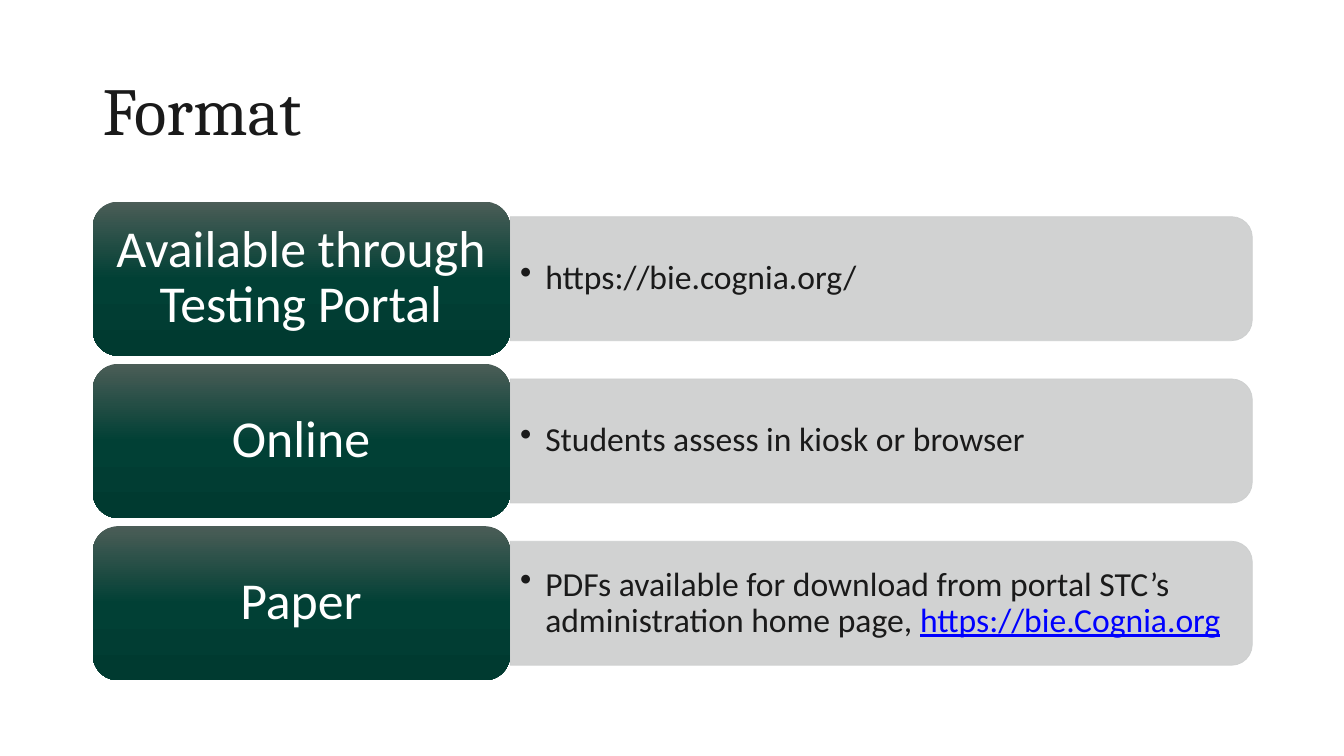
from copy import deepcopy

from lxml.etree import SubElement
from pptx import Presentation
from pptx.dml.color import RGBColor
from pptx.enum.shapes import MSO_SHAPE
from pptx.enum.text import MSO_ANCHOR, PP_ALIGN
from pptx.oxml.ns import qn
from pptx.util import Inches, Pt

COLORS = {
    "ink": "1A1A1A",
    "bar": "CCCECE",
    "label": "FFFFFF",
    "link": "0000FF",
    "green_top": "4B5D57",
    "green_middle": "014035",
    "green_bottom": "003A30",
}
ROWS = [
    ("Available through Testing Portal", "https://bie.cognia.org/", ""),
    ("Online", "Students assess in kiosk or browser", ""),
    (
        "Paper",
        "PDFs available for download from portal STC’s administration home page, ",
        "https://bie.Cognia.org",
    ),
]
FIRST_TOP, ROW_PITCH, LABEL_HEIGHT = 2, 1.61, 1.53
LABEL_LEFT, LABEL_WIDTH = 0.92, 4.14
BAR_LEFT = LABEL_LEFT + LABEL_WIDTH
BAR_LENGTH, BAR_HEIGHT = 7.36, 1.23


def color(name):
    """Return the named palette colour."""
    return RGBColor.from_string(COLORS[name])


def add_text(slide, box, text, font_name, size, color_name, margins=(0.1, 0.05)):
    """Add a wrapped, vertically centred text box and return its paragraph."""
    frame = slide.shapes.add_textbox(*map(Inches, box)).text_frame
    frame.word_wrap = True
    frame.vertical_anchor = MSO_ANCHOR.MIDDLE
    frame.margin_left = frame.margin_right = Inches(margins[0])
    frame.margin_top = frame.margin_bottom = Inches(margins[1])
    paragraph = frame.paragraphs[0]
    paragraph.text = text
    paragraph.line_spacing = 0.9
    font = paragraph.runs[0].font
    font.name, font.size, font.color.rgb = font_name, Pt(size), color(color_name)
    return paragraph


def add_bullet(paragraph):
    """Give the paragraph a hanging round bullet."""
    properties = paragraph._p.get_or_add_pPr()
    properties.set("marL", str(Inches(0.25)))
    properties.set("indent", str(Inches(-0.25)))
    SubElement(properties, qn("a:buChar"), char="•")


def add_detail_bar(slide, middle):
    """Add the grey bar, turned so that its rounded corners face right."""
    bar = slide.shapes.add_shape(
        MSO_SHAPE.ROUND_2_SAME_RECTANGLE,
        Inches(BAR_LEFT + (BAR_LENGTH - BAR_HEIGHT) / 2),
        Inches(middle - BAR_LENGTH / 2),
        Inches(BAR_HEIGHT),
        Inches(BAR_LENGTH),
    )
    bar.rotation = 90
    bar.shadow.inherit = False
    bar.fill.solid()
    bar.fill.fore_color.rgb = color("bar")
    bar.line.color.rgb = color("bar")
    bar.line.width = Pt(0.5)
    for tint in bar._element.spPr.iter(qn("a:srgbClr")):
        SubElement(tint, qn("a:alpha"), val="90000")


def add_detail(slide, middle, text, link):
    """Add the bulleted detail, ending in a link-styled address if given."""
    box = (BAR_LEFT, middle - 0.555, 7.3, 1.11)
    detail = add_text(slide, box, text, "Calibri", 24, "ink")
    add_bullet(detail)
    detail.space_after = Pt(3.6)
    if link:
        address = detail.add_run()
        address.text = link
        font = address.font
        font.name, font.size, font.underline = "Calibri", Pt(24), True
        font.color.rgb = color("link")


def add_label(slide, top, text):
    """Add the green gradient block with its centred label."""
    block = slide.shapes.add_shape(
        MSO_SHAPE.ROUNDED_RECTANGLE,
        Inches(LABEL_LEFT),
        Inches(top),
        Inches(LABEL_WIDTH),
        Inches(LABEL_HEIGHT),
    )
    block.shadow.inherit = False
    block.line.fill.background()
    block.fill.gradient()
    block.fill.gradient_angle = 270
    stop_list = block._element.spPr.find(qn("a:gradFill")).find(qn("a:gsLst"))
    stop_list.append(deepcopy(stop_list[0]))
    shades = ("green_top", "green_middle", "green_bottom")
    for index, (stop, shade) in enumerate(zip(block.fill.gradient_stops, shades)):
        stop.position = index / 2
        stop.color.rgb = color(shade)
    box = (LABEL_LEFT + 0.07, top + 0.07, 3.99, 1.38)
    label = add_text(slide, box, text, "Calibri", 37, "label", (0.15, 0.08))
    label.alignment = PP_ALIGN.CENTER


def main():
    """Build the slide and save it."""
    presentation = Presentation()
    presentation.slide_width = Inches(13.33)
    presentation.slide_height = Inches(7.5)
    slide = presentation.slides.add_slide(presentation.slide_layouts[6])
    add_text(slide, (0.92, 0.4, 11.5, 1.45), "Format", "Cambria", 48, "ink")
    for index, (label, detail, link) in enumerate(ROWS):
        top = FIRST_TOP + index * ROW_PITCH
        middle = top + LABEL_HEIGHT / 2
        add_detail_bar(slide, middle)
        add_detail(slide, middle, detail, link)
        add_label(slide, top, label)
    presentation.save("out.pptx")


if __name__ == "__main__":
    main()
